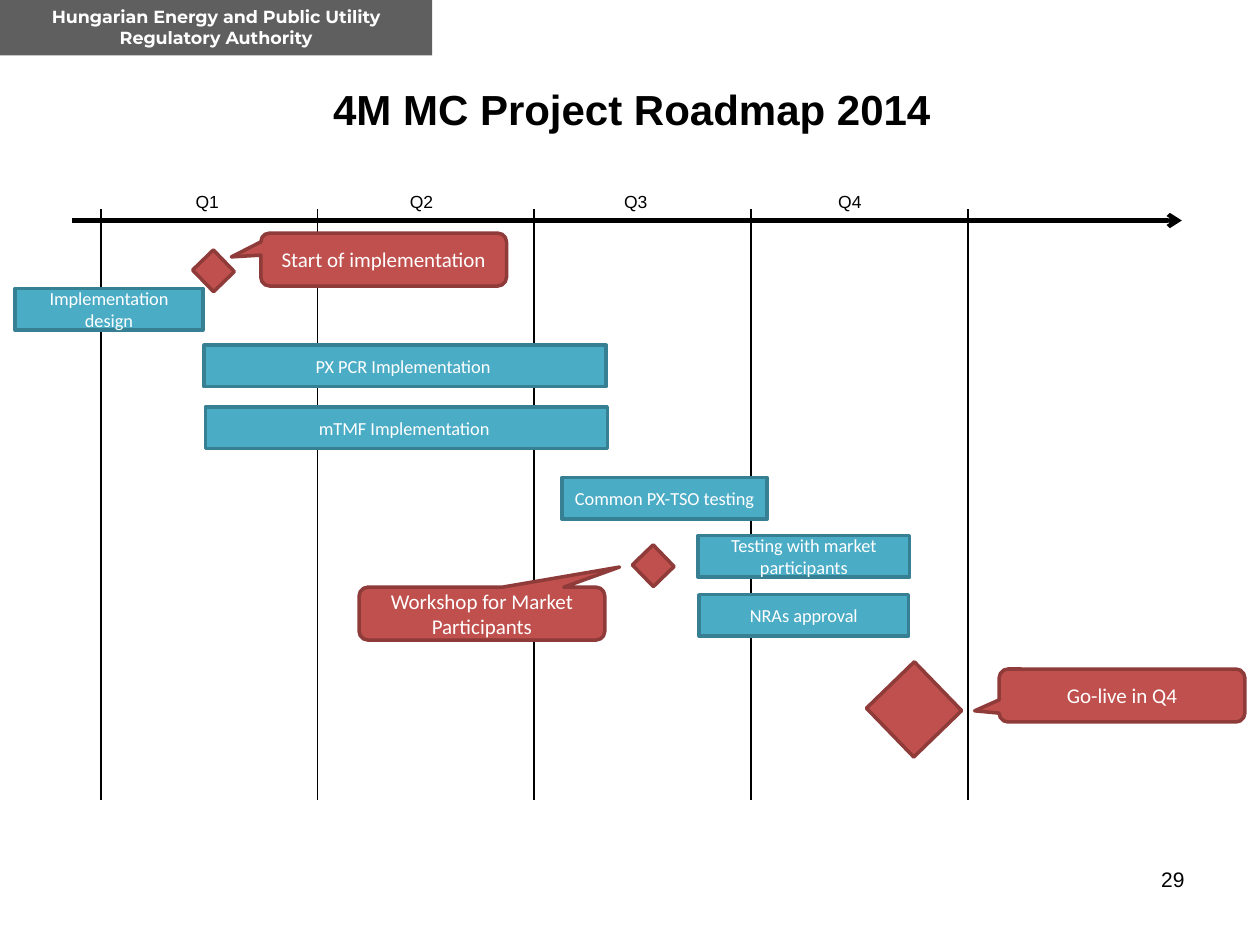
import lxml.etree
import pptx
import pptx.dml.color
import pptx.enum.shapes
import pptx.enum.text
import pptx.oxml.ns
import pptx.util

Inches = pptx.util.Inches
Pt = pptx.util.Pt
RGBColor = pptx.dml.color.RGBColor
MSO_SHAPE = pptx.enum.shapes.MSO_SHAPE
PP_ALIGN = pptx.enum.text.PP_ALIGN
MSO_ANCHOR = pptx.enum.text.MSO_ANCHOR
qn = pptx.oxml.ns.qn

BLACK = RGBColor(0x00, 0x00, 0x00)
WHITE = RGBColor(0xFF, 0xFF, 0xFF)
GRAY = RGBColor(0x5F, 0x5F, 0x5F)
TEAL = RGBColor(0x4B, 0xAC, 0xC6)
DARK_TEAL = RGBColor(0x37, 0x7F, 0x92)
RED = RGBColor(0xC0, 0x50, 0x4D)
DARK_RED = RGBColor(0x8E, 0x3B, 0x39)

HEADER_FONT = {"name": "Montserrat", "size": Pt(10), "bold": True}
TITLE_FONT = {"name": "Arial", "size": Pt(24), "bold": True}
QUARTER_FONT = {"name": "Arial", "size": Pt(10)}
NUMBER_FONT = {"name": "Arial", "size": Pt(12)}
BAR_FONT = {"name": "Calibri", "size": Pt(10.5)}
CALLOUT_FONT = {"name": "Calibri", "size": Pt(12)}

AXIS_Y = 1.75
GRID_LEFT, GRID_STEP = 0.8, 1.72
QUARTER_LEFT, QUARTER_STEP = 0.99, 1.7
BAR_HEIGHT = 0.33
CALLOUT_SIZE = (1.95, 0.42)
DIAMOND_ROTATION = 315.9

BARS = [
    ("Implementation design", 0.12, 2.29, 1.49),
    ("PX PCR Implementation ", 1.62, 2.74, 3.19),
    ("mTMF Implementation ", 1.63, 3.23, 3.19),
    ("Common PX-TSO testing", 4.46, 3.79, 1.63),
    ("Testing with market participants", 5.54, 4.25, 1.68),
    ("NRAs approval", 5.55, 4.72, 1.66),
]
CALLOUTS = [
    ("Start of implementation", 2.07, 1.85, (-0.62, -0.05)),
    ("Go-live in Q4", 7.93, 5.31, (-0.6, 0.29)),
    ("Workshop for Market Participants", 2.85, 4.66, (0.56, -0.88)),
]
DIAMONDS = [(6.99, 5.36, 0.53, 0.54), (5.07, 4.37, 0.23, 0.24), (1.58, 2.03, 0.23, 0.24)]


def write_text(sp, text, fmt, color, align=PP_ALIGN.CENTER, anchor=MSO_ANCHOR.TOP):
    tf = sp.text_frame
    tf.word_wrap = True
    tf.vertical_anchor = anchor
    p = tf.paragraphs[0]
    p.alignment = align
    r = p.add_run()
    r.text = text
    for name, value in fmt.items():
        setattr(r.font, name, value)
    r.font.color.rgb = color


def add_label(s, text, box, fmt, align=PP_ALIGN.CENTER):
    sp = s.shapes.add_textbox(*map(Inches, box))
    write_text(sp, text, fmt, BLACK, align)


def add_box(s, kind, box, fill, outline=None):
    sp = s.shapes.add_shape(kind, *map(Inches, box))
    sp.shadow.inherit = False
    sp.fill.solid()
    sp.fill.fore_color.rgb = fill
    if outline is None:
        sp.line.fill.background()
    else:
        sp.line.color.rgb = outline
        sp.line.width = Pt(2)
    return sp


def add_line(s, start, end, width, arrow=False):
    line = s.shapes.add_connector(
        pptx.enum.shapes.MSO_CONNECTOR.STRAIGHT, *map(Inches, start + end))
    line.line.color.rgb = BLACK
    line.line.width = Pt(width)
    if arrow:
        lxml.etree.SubElement(line.line._get_or_add_ln(), qn("a:tailEnd"), type="arrow")
    lxml.etree.SubElement(line._element.spPr, qn("a:effectLst"))


def add_bar(s, text, left, top, width):
    sp = add_box(s, MSO_SHAPE.RECTANGLE, (left, top, width, BAR_HEIGHT), TEAL, DARK_TEAL)
    write_text(sp, text, BAR_FONT, WHITE, anchor=MSO_ANCHOR.MIDDLE)


def add_callout(s, text, left, top, tip):
    sp = add_box(s, MSO_SHAPE.ROUNDED_RECTANGULAR_CALLOUT, (left, top, *CALLOUT_SIZE),
                 RED, DARK_RED)
    sp.adjustments[0], sp.adjustments[1] = tip
    write_text(sp, text, CALLOUT_FONT, WHITE, anchor=MSO_ANCHOR.MIDDLE)


def add_diamond(s, *box):
    sp = add_box(s, MSO_SHAPE.RECTANGLE, box, RED, DARK_RED)
    sp.rotation = DIAMOND_ROTATION


def add_timeline(s):
    for i in range(5):
        x = GRID_LEFT + i * GRID_STEP
        add_line(s, (x, 1.66), (x, 6.35), 1)
    add_line(s, (0.57, AXIS_Y), (9.38, AXIS_Y), 2.5, arrow=True)
    for i in range(4):
        box = (QUARTER_LEFT + i * QUARTER_STEP, 1.47, 1.31, 0.28)
        add_label(s, f"Q{i + 1}", box, QUARTER_FONT)


def main():
    """Build the project roadmap slide and save it."""
    prs = pptx.Presentation()
    prs.slide_width, prs.slide_height = Inches(10), Inches(7.5)
    s = prs.slides.add_slide(prs.slide_layouts[6])
    add_label(s, "29", (7.17, 6.83, 2.33, 0.52), NUMBER_FONT, PP_ALIGN.RIGHT)
    header = add_box(s, MSO_SHAPE.RECTANGLE, (0, 0, 3.43, 0.44), GRAY)
    write_text(header, "Hungarian Energy and Public Utility Regulatory Authority",
               HEADER_FONT, WHITE)
    add_label(s, "4M MC Project Roadmap 2014", (1.1, 0.61, 7.83, 0.55), TITLE_FONT)
    add_timeline(s)
    for bar in BARS:
        add_bar(s, *bar)
    for callout in CALLOUTS:
        add_callout(s, *callout)
    for diamond in DIAMONDS:
        add_diamond(s, *diamond)
    prs.save("out.pptx")


if __name__ == "__main__":
    main()
